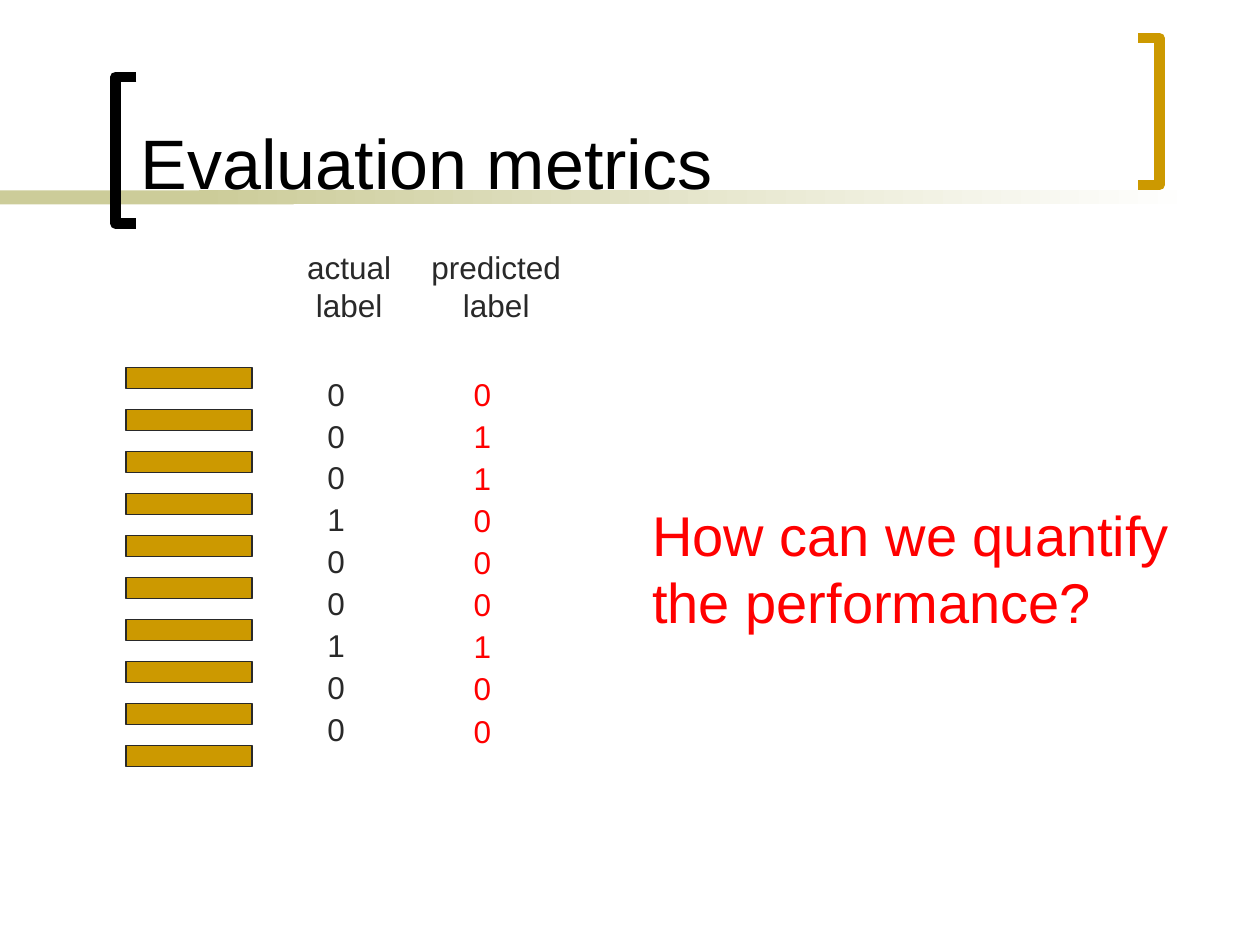
from pptx import Presentation
from pptx.dml.color import RGBColor
from pptx.enum.shapes import MSO_SHAPE
from pptx.enum.text import MSO_ANCHOR, MSO_AUTO_SIZE, PP_ALIGN
from pptx.util import Cm, Pt

COLORS = {
    "black": "000000",
    "ink": "292929",
    "gold": "CC9900",
    "olive": "CCCC99",
    "white": "FFFFFF",
    "red": "FF0000",
}
FONT = "Arial"
ACTUAL = [0, 0, 0, 1, 0, 0, 1, 0, 0]
PREDICTED = [0, 1, 1, 0, 0, 0, 1, 0, 0]
EXAMPLE_COUNT = 10


def rgb(name):
    return RGBColor.from_string(COLORS[name])


def add_words(slide, words, left, top, width, height, size, color,
              wrap=False, align=PP_ALIGN.LEFT, grow=True):
    words_box = slide.shapes.add_textbox(Cm(left), Cm(top), Cm(width), Cm(height))
    frame = words_box.text_frame
    frame.word_wrap = wrap
    frame.auto_size = MSO_AUTO_SIZE.SHAPE_TO_FIT_TEXT if grow else MSO_AUTO_SIZE.NONE
    paragraph = frame.paragraphs[0]
    paragraph.text = words
    paragraph.alignment = align
    for run in paragraph.runs:
        run.font.name = FONT
        run.font.size = Pt(size)
        run.font.color.rgb = rgb(color)
    return frame


def add_bar(slide, left, top, width, height):
    bar = slide.shapes.add_shape(
        MSO_SHAPE.RECTANGLE, Cm(left), Cm(top), Cm(width), Cm(height))
    bar.shadow.inherit = False
    return bar


def add_bracket(slide, spine, tip, top, height, color):
    """Square bracket whose arms reach from the spine to the tip."""
    bottom = top + height
    builder = slide.shapes.build_freeform(Cm(tip), Cm(top))
    builder.add_line_segments(
        [(Cm(spine), Cm(top)), (Cm(spine), Cm(bottom)), (Cm(tip), Cm(bottom))],
        close=False)
    bracket = builder.convert_to_shape()
    bracket.shadow.inherit = False
    bracket.fill.background()
    bracket.line.color.rgb = rgb(color)
    bracket.line.width = Pt(6)


def add_header(slide, left, top, width, height):
    # Rule: a plain start that fades out to the right
    rule_top, rule_height, fade_start = top + 3.84, 0.28, left + 4.01
    plain_rule = add_bar(slide, left, rule_top, 5.92, rule_height)
    plain_rule.fill.solid()
    plain_rule.fill.fore_color.rgb = rgb("olive")
    fading_rule = add_bar(slide, fade_start, rule_top,
                          left + width - fade_start, rule_height)
    fading_rule.fill.gradient()
    fading_rule.fill.gradient_angle = 0
    for stop, color in zip(fading_rule.fill.gradient_stops, ("olive", "white")):
        stop.color.rgb = rgb(color)
    for rule in (plain_rule, fading_rule):
        rule.line.fill.background()

    # Brackets around the title
    arm, bracket_height = 0.42, 2.96
    left_spine, right_spine = left + 2.33, left + 23.37
    add_bracket(slide, left_spine, left_spine + arm, top + 1.55,
                bracket_height, "black")
    add_bracket(slide, right_spine, right_spine - arm, top + 0.77,
                bracket_height, "gold")

    # Title
    title = add_words(slide, "Evaluation metrics", left + 2.59, top + 0.28,
                      19.89, height - 0.28, 40, "black", wrap=True, grow=False)
    title.vertical_anchor = MSO_ANCHOR.BOTTOM


def add_examples(slide, left, top, width, height):
    bar_height = 0.42
    pitch = (height - bar_height) / (EXAMPLE_COUNT - 1)
    for row in range(EXAMPLE_COUNT):
        example = add_bar(slide, left, top + row * pitch, width, bar_height)
        example.fill.solid()
        example.fill.fore_color.rgb = rgb("gold")
        example.line.color.rgb = rgb("ink")
        example.line.width = Pt(0.75)


def add_label_column(slide, left, top, width, height, heading, labels,
                     color, indent):
    # Heading
    add_words(slide, heading, left, top, width, 1.8, 18, "ink",
              align=PP_ALIGN.CENTER)
    # One label for each example
    label_height, first_top = 1.02, top + 2.55
    pitch = (top + height - label_height - first_top) / (len(labels) - 1)
    for row, label in enumerate(labels):
        add_words(slide, str(label), left + indent, first_top + row * pitch,
                  0.86, label_height, 18, color)


def add_question(slide, left, top, width, height):
    add_words(slide, "How can we quantify the performance?",
              left, top, width, height, 32, "red", wrap=True)


def main():
    presentation = Presentation()
    presentation.slide_width, presentation.slide_height = Cm(25.4), Cm(19.05)
    slide = presentation.slides.add_slide(presentation.slide_layouts[6])

    add_header(slide, 0, 0, 24.13, 4.22)
    add_examples(slide, 2.54, 7.41, 2.54, 8.04)
    add_label_column(slide, 5.92, 4.88, 2.24, 10.32,
                     "actual\nlabel", ACTUAL, "ink", 0.43)
    add_label_column(slide, 8.43, 4.88, 3.15, 10.36,
                     "predicted\nlabel", PREDICTED, "red", 0.87)
    add_question(slide, 12.9, 9.96, 11.43, 3)

    presentation.save("out.pptx")


if __name__ == "__main__":
    main()
